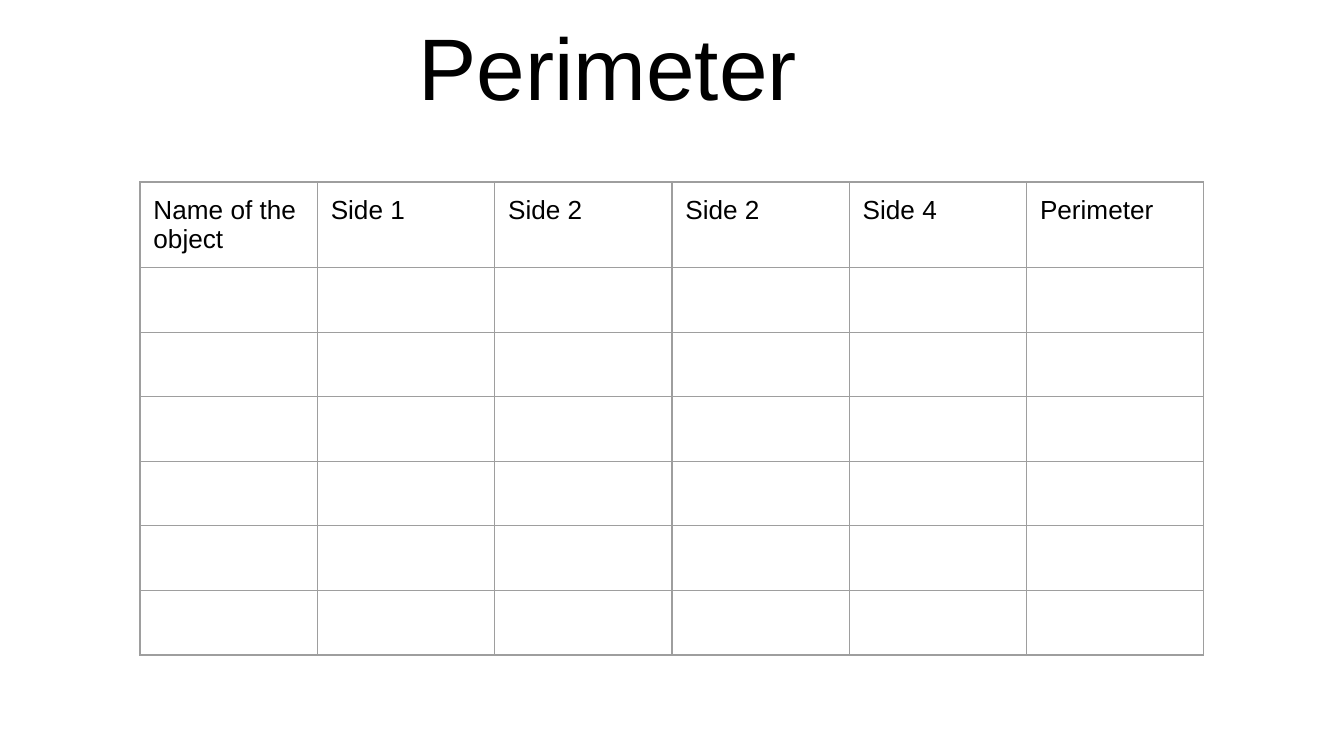
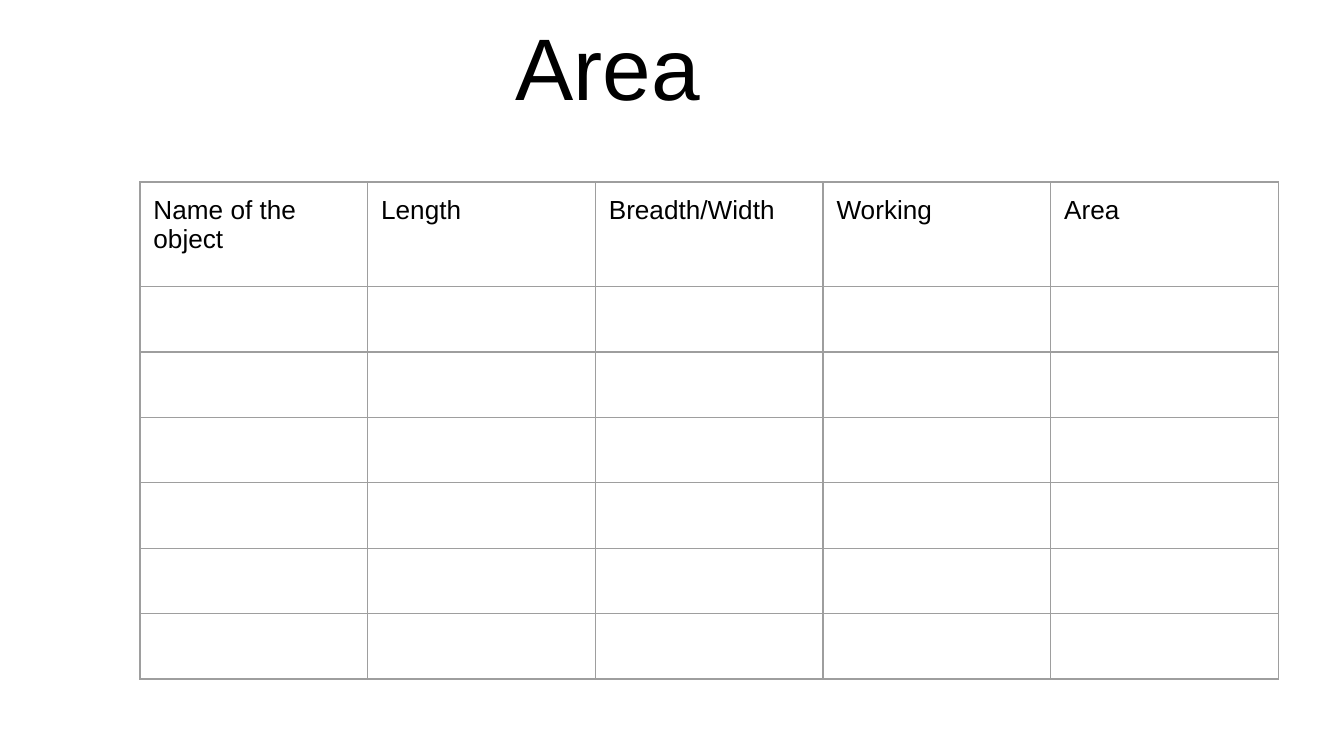
from dataclasses import dataclass

from lxml import etree
from pptx import Presentation
from pptx.dml.color import RGBColor
from pptx.enum import text
from pptx.oxml.ns import qn
from pptx.slide import Slide
from pptx.table import _Cell
from pptx.util import Pt

COLORS = {"text": "000000", "border": "9E9E9E", "background": "FFFFFF"}
FONT = "Arial"
TITLE_SIZE = 46.8
HEADER_SIZE = 14
EMPTY_CELL_SIZE = 18
INSET = 7.2
BORDER_WIDTH = 0.75
TABLE_LEFT, TABLE_TOP = 75, 97.5
BODY_ROWS = 6


@dataclass(frozen=True)
class Worksheet:
    title: str
    headers: tuple[str, ...]
    column_width: float
    header_height: float
    row_height: float


WORKSHEETS = (
    Worksheet(
        "Perimeter",
        ("Name of the object", "Side 1", "Side 2", "Side 2", "Side 4", "Perimeter"),
        95, 30.24, 30.24,
    ),
    Worksheet(
        "Area",
        ("Name of the object", "Length", "Breadth/Width", "Working", "Area"),
        122, 56, 35.05,
    ),
)


def add_run(paragraph: text.PP_ALIGN, words: str, size: float) -> None:
    run = paragraph.add_run()
    run.text = words
    run.font.name = FONT
    run.font.size = Pt(size)
    run.font.color.rgb = RGBColor.from_string(COLORS["text"])


def set_insets(holder) -> None:
    for side in ("left", "top", "right", "bottom"):
        setattr(holder, f"margin_{side}", Pt(INSET))


def add_title(slide: Slide, words: str) -> None:
    title = slide.shapes.title
    title.left, title.top = Pt(0), Pt(5)
    title.width, title.height = Pt(651), Pt(65.5)
    frame = title.text_frame
    frame.word_wrap = True
    frame.auto_size = text.MSO_AUTO_SIZE.NONE
    frame.vertical_anchor = text.MSO_ANCHOR.BOTTOM
    set_insets(frame)
    paragraph = frame.paragraphs[0]
    paragraph.alignment = text.PP_ALIGN.CENTER
    add_run(paragraph, words, TITLE_SIZE)


def format_cell(cell: _Cell) -> None:
    set_insets(cell)
    properties = cell._tc.get_or_add_tcPr()
    for edge in ("a:lnL", "a:lnR", "a:lnT", "a:lnB"):
        line = etree.SubElement(properties, qn(edge), w=str(Pt(BORDER_WIDTH)))
        fill = etree.SubElement(line, qn("a:solidFill"))
        etree.SubElement(fill, qn("a:srgbClr"), val=COLORS["border"])
    cell.fill.background()


def size_empty_cell(cell: _Cell) -> None:
    paragraph = cell.text_frame.paragraphs[0]
    ending = etree.SubElement(
        paragraph._p, qn("a:endParaRPr"), sz=str(EMPTY_CELL_SIZE * 100)
    )
    etree.SubElement(ending, qn("a:latin"), typeface=FONT)


def add_grid(slide: Slide, sheet: Worksheet) -> None:
    columns = len(sheet.headers)
    height = sheet.header_height + BODY_ROWS * sheet.row_height
    table = slide.shapes.add_table(
        BODY_ROWS + 1, columns, Pt(TABLE_LEFT), Pt(TABLE_TOP),
        Pt(columns * sheet.column_width), Pt(height),
    ).table
    table.first_row = False
    table.horz_banding = False
    for index, row in enumerate(table.rows):
        row.height = Pt(sheet.row_height if index else sheet.header_height)
        for cell, header in zip(row.cells, sheet.headers):
            format_cell(cell)
            if index:
                size_empty_cell(cell)
            else:
                add_run(cell.text_frame.paragraphs[0], header, HEADER_SIZE)


def main() -> None:
    presentation = Presentation()
    presentation.slide_width, presentation.slide_height = Pt(720), Pt(405)
    title_only = presentation.slide_layouts.get_by_name("Title Only")
    for sheet in WORKSHEETS:
        slide = presentation.slides.add_slide(title_only)
        background = slide.background.fill
        background.solid()
        background.fore_color.rgb = RGBColor.from_string(COLORS["background"])
        add_title(slide, sheet.title)
        add_grid(slide, sheet)
    presentation.save("out.pptx")


if __name__ == "__main__":
    main()
